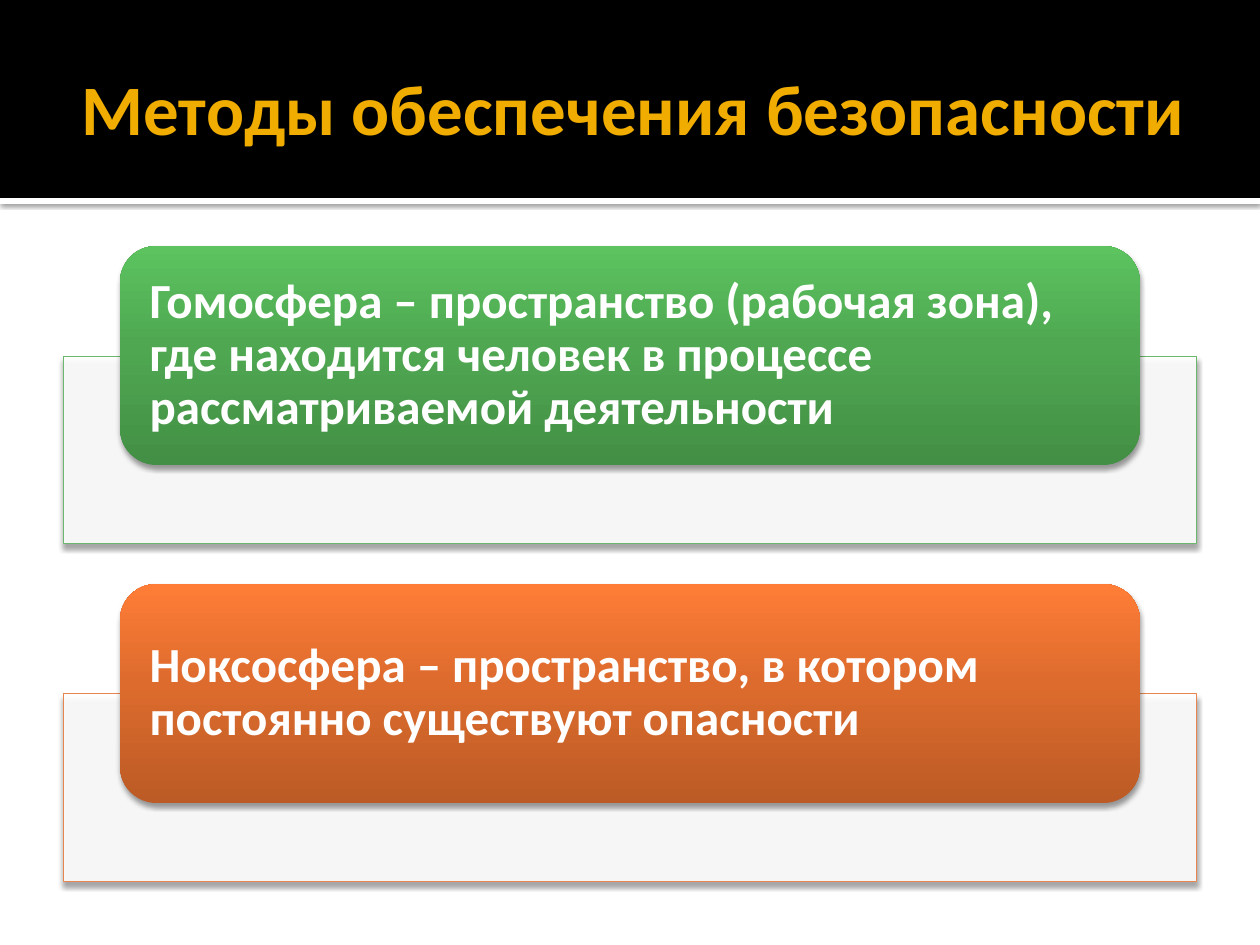
from copy import deepcopy

from lxml.etree import SubElement
from pptx import Presentation
from pptx.dml.color import RGBColor
from pptx.enum.shapes import MSO_SHAPE as Shape
from pptx.enum.text import MSO_ANCHOR as Anchor, MSO_AUTO_SIZE as AutoSize, PP_ALIGN as Align
from pptx.oxml.ns import qn
from pptx.util import Emu, Pt

EMU_PER_PX = 914400 / 126
COLORS = {"white": "FFFFFF", "black": "000000", "title": "F0AD00"}
TOPICS = [
    {
        "text": "Гомосфера – пространство (рабочая зона), где находится человек "
                "в процессе рассматриваемой деятельности",
        "line": "6BB76D",
        "gradient": ["438F45", "4FA851", "5CC35F"],
    },
    {
        "text": "Ноксосфера – пространство, в котором постоянно существуют опасности",
        "line": "E88651",
        "gradient": ["BC5B26", "DD6B2D", "FF7D37"],
    },
]
STOP_POSITIONS = [0, 0.55, 1]
BAND_SHADOW = {"alpha": 60, "blur": 2.5, "distance": 0.8}
CARD_SHADOW = {"alpha": 38, "blur": 3.1, "distance": 2}


def px(value):
    return Emu(round(value * EMU_PER_PX))


def rgb(color):
    return RGBColor.from_string(color)


def set_alpha(color_element, percent):
    SubElement(color_element, qn("a:alpha"), val=str(percent * 1000))


def add_box(page, kind, box, color=None, shadow=None):
    """Add a borderless shape; shadow falls straight down."""
    shape = page.shapes.add_shape(kind, *map(px, box))
    shape.line.fill.background()
    shape.shadow.inherit = False
    if color:
        shape.fill.solid()
        shape.fill.fore_color.rgb = rgb(color)
    if shadow:
        effects = shape._element.spPr.find(qn("a:effectLst"))
        outer = SubElement(effects, qn("a:outerShdw"), blurRad=str(Pt(shadow["blur"])),
                           dist=str(Pt(shadow["distance"])), dir="5400000", rotWithShape="0")
        set_alpha(SubElement(outer, qn("a:srgbClr"), val=COLORS["black"]), shadow["alpha"])
    return shape


def fill_gradient(shape, colors):
    """Fill with three stops running from bottom to top."""
    shape.fill.gradient()
    shape.fill.gradient_angle = 90
    first = shape._element.spPr.find(".//" + qn("a:gs"))
    first.addnext(deepcopy(first))
    for stop, position, color in zip(shape.fill.gradient_stops, STOP_POSITIONS, colors):
        stop.position = position
        stop.color.rgb = rgb(color)


def write_text(shape, text, size, color, align, margins):
    frame = shape.text_frame
    frame_format = {"word_wrap": True, "auto_size": AutoSize.NONE,
                    "vertical_anchor": Anchor.MIDDLE}
    sides = ("margin_left", "margin_top", "margin_right", "margin_bottom")
    frame_format.update(zip(sides, map(px, margins)))
    for name, value in frame_format.items():
        setattr(frame, name, value)
    para = frame.paragraphs[0]
    para.alignment = align
    span = para.add_run()
    span.text = text
    for name, value in {"name": "Calibri", "size": Pt(size), "bold": True}.items():
        setattr(span.font, name, value)
    span.font.color.rgb = rgb(color)
    return para


def add_header(page, box):
    left, top, width, height = box
    add_box(page, Shape.RECTANGLE, (left, top + height, width, 6), COLORS["white"], BAND_SHADOW)
    add_box(page, Shape.RECTANGLE, box, COLORS["black"])
    title = page.shapes.title
    title.left, title.top = px(left + 63), px(top + 21)
    title.width, title.height = px(width - 2 * 63), px(173)
    write_text(title, "Методы обеспечения безопасности", 40.5, COLORS["title"],
               Align.CENTER, (13, 6, 6, 6))
    page.shapes._spTree.append(title._element)  # bring in front of the band


def add_topic(page, box, topic):
    left, top, width, height = box
    panel = add_box(page, Shape.RECTANGLE, (left, top + 110, width, height - 110),
                    COLORS["white"], CARD_SHADOW)
    set_alpha(panel._element.spPr.find(qn("a:solidFill"))[0], 90)
    panel.line.color.rgb = rgb(topic["line"])
    panel.line.width = Pt(0.5)

    card = add_box(page, Shape.ROUNDED_RECTANGLE, (left + 57, top, width - 2 * 57, 219),
                   shadow=CARD_SHADOW)
    fill_gradient(card, topic["gradient"])
    # the rounded corners add their own inset to the text area
    para = write_text(card, topic["text"], 28, COLORS["white"], Align.LEFT, (19, 0, 19, 0))
    para.line_spacing = 0.9


def main():
    deck = Presentation()
    deck.slide_width, deck.slide_height = px(1260), px(945)
    page = deck.slides.add_slide(deck.slide_layouts[5])
    add_header(page, (0, 0, 1260, 198))
    for index, topic in enumerate(TOPICS):
        add_topic(page, (63, 246 + index * 338, 1134, 298), topic)
    deck.save("out.pptx")


if __name__ == "__main__":
    main()
